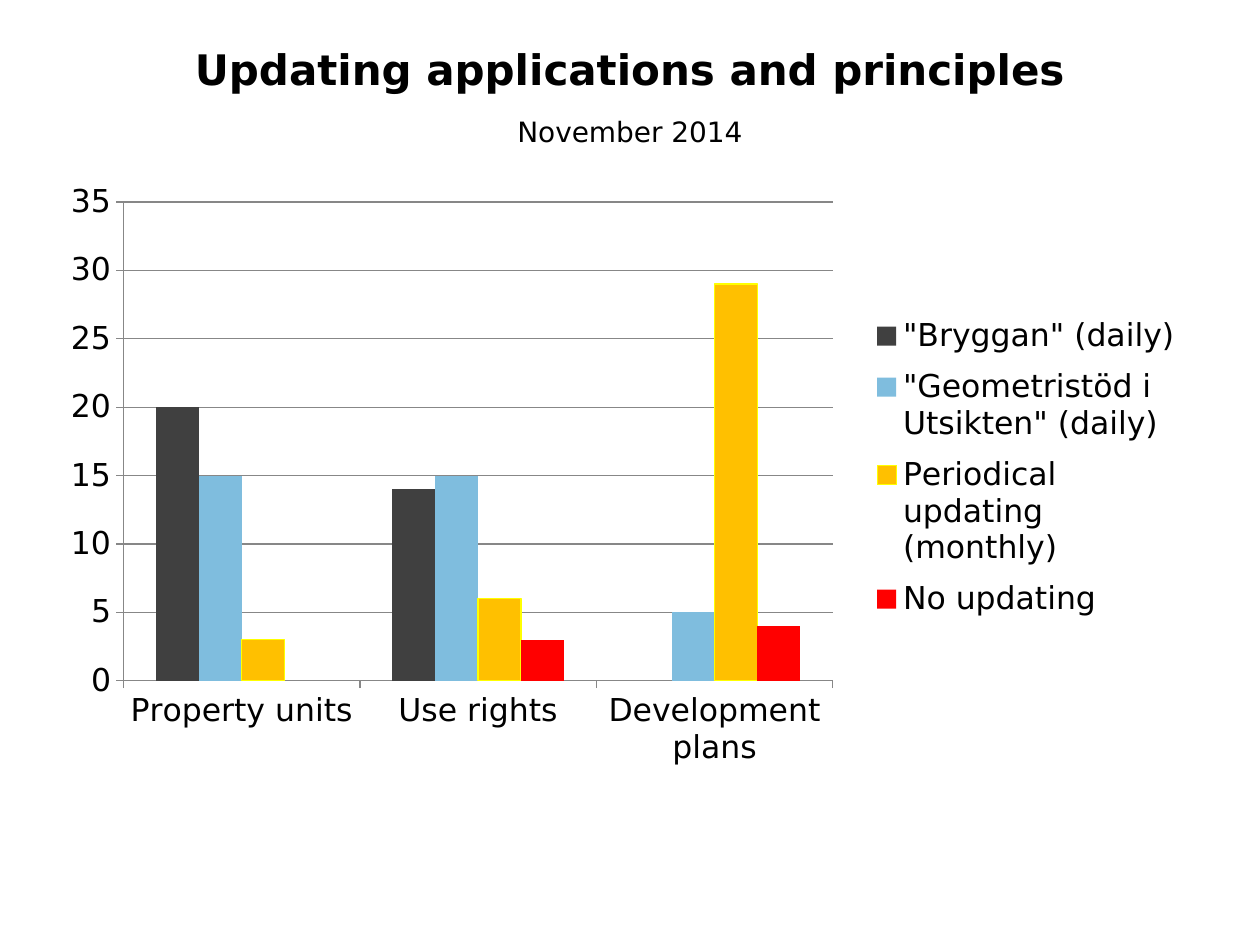
from dataclasses import dataclass
from typing import Optional

from lxml import etree
from pptx import Presentation
from pptx import util as u
from pptx.chart.data import CategoryChartData
from pptx.dml.color import RGBColor
from pptx.enum import chart as ch
from pptx.enum import text
from pptx.oxml import parse_xml
from pptx.oxml.ns import nsdecls, qn

FONT = "DejaVu Sans"
BLACK, GRAY = "000000", "878787"
WIDTH, HEIGHT = u.Inches(10), u.Inches(7.5)


@dataclass
class Series:
    name: str
    values: tuple
    fill: str
    outline: Optional[str] = None


CATEGORIES = ("Property units", "Use rights", "Development plans")
SERIES = (
    Series('"Bryggan" (daily)', (20, 14, None), "404040"),
    Series('"Geometristöd i Utsikten" (daily)', (15, 15, 5), "7FBDDE"),
    Series("Periodical updating (monthly)", (3, 6, 29), "FFC000", "FFFF00"),
    Series("No updating", (None, 3, 4), "FF0000"),
)


def color(value: str) -> RGBColor:
    return RGBColor.from_string(value)


def area(left: float, top: float, width: float, height: float) -> tuple:
    """Turn shares of the slide's size into lengths."""
    return (int(WIDTH * left), int(HEIGHT * top),
            int(WIDTH * width), int(HEIGHT * height))


def set_font(font, size: float, bold: bool = False) -> None:
    font.name, font.size, font.bold = FONT, u.Pt(size), bold
    font.color.rgb = color(BLACK)


def write(paragraph, content: str, *, size: float, bold: bool = False,
          before: float = 0) -> None:
    paragraph.alignment = text.PP_ALIGN.CENTER
    if before:
        paragraph.space_before = u.Pt(before)
    run = paragraph.add_run()
    run.text = content
    set_font(run.font, size, bold)


def style_line(line, value: str) -> None:
    line.color.rgb = color(value)
    line.width = u.Pt(0.75)


def place(element, x: float, y: float, w: float, h: float,
          inner: bool = False) -> None:
    """Give a plot area or legend a fixed place, in shares of the chart."""
    for old in element.findall(qn("c:layout")):
        element.remove(old)
    target = '<c:layoutTarget val="inner"/>' if inner else ""
    layout = parse_xml(
        f'<c:layout {nsdecls("c")}><c:manualLayout>{target}'
        '<c:xMode val="edge"/><c:yMode val="edge"/>'
        f'<c:x val="{x}"/><c:y val="{y}"/><c:w val="{w}"/><c:h val="{h}"/>'
        '</c:manualLayout></c:layout>')
    position = element.find(qn("c:legendPos"))
    if position is None:
        element.insert(0, layout)
    else:
        position.addnext(layout)


def add_title(slide) -> None:
    frame = slide.shapes.add_textbox(*area(0.067, 0.039, 0.866, 0.125)).text_frame
    frame.word_wrap = True
    frame.vertical_anchor = text.MSO_ANCHOR.MIDDLE
    write(frame.paragraphs[0], "Updating applications and principles",
          size=24, bold=True)
    write(frame.add_paragraph(), "November 2014", size=16, before=12)


def add_column_chart(slide) -> None:
    data = CategoryChartData()
    data.categories = CATEGORIES
    for series in SERIES:
        data.add_series(series.name, series.values)
    chart = slide.shapes.add_chart(ch.XL_CHART_TYPE.COLUMN_CLUSTERED,
                                   *area(0.02, 0.192, 0.929, 0.808), data).chart
    set_font(chart.font, 18)
    chart.has_title = False

    # Columns
    plot = chart.plots[0]
    plot.gap_width, plot.overlap, plot.vary_by_categories = 150, 0, False
    for drawn, series in zip(plot.series, SERIES):
        drawn.invert_if_negative = False
        drawn.format.fill.solid()
        drawn.format.fill.fore_color.rgb = color(series.fill)
        if series.outline:
            style_line(drawn.format.line, series.outline)
        else:
            drawn.format.line.fill.background()

    # Axes
    for axis in (chart.category_axis, chart.value_axis):
        axis.major_tick_mark = ch.XL_TICK_MARK.OUTSIDE
        axis.minor_tick_mark = ch.XL_TICK_MARK.NONE
        style_line(axis.format.line, GRAY)
    values = chart.value_axis
    values.minimum_scale, values.maximum_scale, values.major_unit = 0, 35, 5
    style_line(values.major_gridlines.format.line, GRAY)

    # Legend and fixed places
    chart.has_legend = True
    legend = chart.legend
    legend.position = ch.XL_LEGEND_POSITION.RIGHT
    legend.include_in_layout = False
    set_font(legend.font, 18)
    plot_area = next(chart.element.iter(qn("c:plotArea")))
    place(plot_area, 0.084, 0.027, 0.606, 0.627, inner=True)
    place(next(chart.element.iter(qn("c:legend"))), 0.72, 0.16, 0.27, 0.43)


def main() -> None:
    presentation = Presentation()
    presentation.slide_width, presentation.slide_height = WIDTH, HEIGHT
    slide = presentation.slides.add_slide(presentation.slide_layouts[6])
    add_title(slide)
    add_column_chart(slide)
    presentation.save("out.pptx")


if __name__ == "__main__":
    main()
